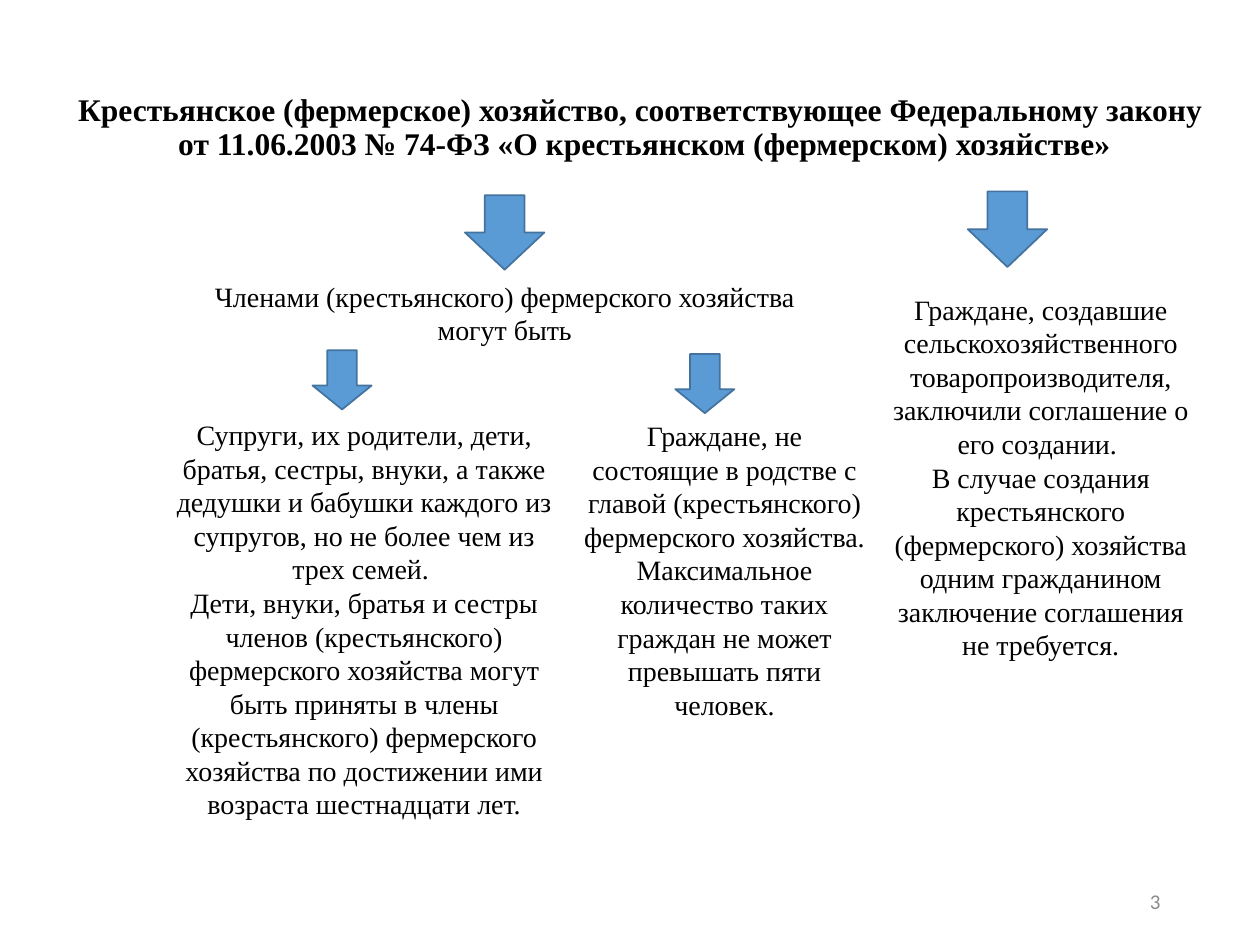
from pptx import Presentation
from pptx.dml.color import RGBColor
from pptx.enum.shapes import MSO_SHAPE
from pptx.enum.text import MSO_ANCHOR, MSO_AUTO_SIZE, PP_ALIGN
from pptx.util import Pt

DOWN_ARROW = MSO_SHAPE.DOWN_ARROW
BOTTOM, MIDDLE = MSO_ANCHOR.BOTTOM, MSO_ANCHOR.MIDDLE
CENTER, RIGHT = PP_ALIGN.CENTER, PP_ALIGN.RIGHT
NO_AUTOFIT = MSO_AUTO_SIZE.NONE
SERIF, SANS = "Times New Roman", "Calibri"


def color(hex_value):
    return RGBColor.from_string(hex_value)


def write(box, lines, size=16, bold=False, font=SERIF, ink="000000",
          align=CENTER, anchor=BOTTOM):
    frame = box.text_frame
    frame.word_wrap = True
    frame.auto_size = NO_AUTOFIT
    frame.vertical_anchor = anchor
    paragraph = frame.paragraphs[0]
    paragraph.alignment = align
    for i, line in enumerate(lines):
        if i:
            paragraph.add_line_break()
        run = paragraph.add_run()
        run.text = line
        run.font.name = font
        run.font.size = Pt(size)
        run.font.bold = bold
        run.font.color.rgb = color(ink)
    return paragraph


prs = Presentation()
prs.slide_width, prs.slide_height = Pt(720), Pt(540)
slide = prs.slides.add_slide(prs.slide_layouts[5])

# Title
title = slide.shapes.title
title.left, title.top, title.width, title.height = Pt(25.2), Pt(25.9), Pt(686.2), Pt(70.6)
heading = write(title, [
    "Крестьянское (фермерское) хозяйство, соответствующее Федеральному закону ",
    "от 11.06.2003 № 74-ФЗ «О крестьянском (фермерском) хозяйстве»",
], size=18, bold=True)
heading.line_spacing = 0.9

# Arrows: left, top, width, height, head proportion
arrows = [
    (553, 109.4, 45.4, 43.2, 0.5),
    (265.7, 111.6, 45.4, 42.5, 0.5),
    (178.6, 200.2, 33.8, 33.8, 0.405),
    (385.9, 202.3, 33.8, 33.8, 0.405),
]
for left, top, width, height, head in arrows:
    arrow = slide.shapes.add_shape(DOWN_ARROW, Pt(left), Pt(top), Pt(width), Pt(height))
    arrow.adjustments[0] = 0.5
    arrow.adjustments[1] = head
    arrow.shadow.inherit = False
    arrow.fill.solid()
    arrow.fill.fore_color.rgb = color("5B9BD5")
    arrow.line.color.rgb = color("43739E")
    arrow.line.width = Pt(1)

# Members, relatives, non-relatives and founders: left, top, width, height, lines
blocks = [
    (110.2, 159.8, 356.4, 41.8, [
        "Членами (крестьянского) фермерского хозяйства могут быть",
    ]),
    (90, 236.2, 236.2, 236.2, [
        "Супруги, их родители, дети, братья, сестры, внуки, а также дедушки и бабушки "
        "каждого из супругов, но не более чем из трех семей. ",
        "Дети, внуки, братья и сестры членов (крестьянского) фермерского хозяйства могут "
        "быть приняты в члены (крестьянского) фермерского хозяйства по достижении ими "
        "возраста шестнадцати лет.",
    ]),
    (326.2, 236.2, 175.7, 179.3, [
        "Граждане, не состоящие в родстве с главой (крестьянского) фермерского хозяйства. "
        "Максимальное количество таких граждан не может превышать пяти человек.",
    ]),
    (499, 159.8, 191.5, 221.8, [
        "Граждане, создавшие сельскохозяйственного товаропроизводителя, заключили "
        "соглашение о его создании. ",
        "В случае создания крестьянского (фермерского) хозяйства одним гражданином "
        "заключение соглашения не требуется.",
    ]),
]
for left, top, width, height, lines in blocks:
    write(slide.shapes.add_textbox(Pt(left), Pt(top), Pt(width), Pt(height)), lines)

# Slide number
page_number = slide.shapes.add_textbox(Pt(508.3), Pt(500.4), Pt(162), Pt(28.8))
write(page_number, ["3"], size=12, font=SANS, ink="8C8C8C", align=RIGHT, anchor=MIDDLE)

prs.save("out.pptx")
